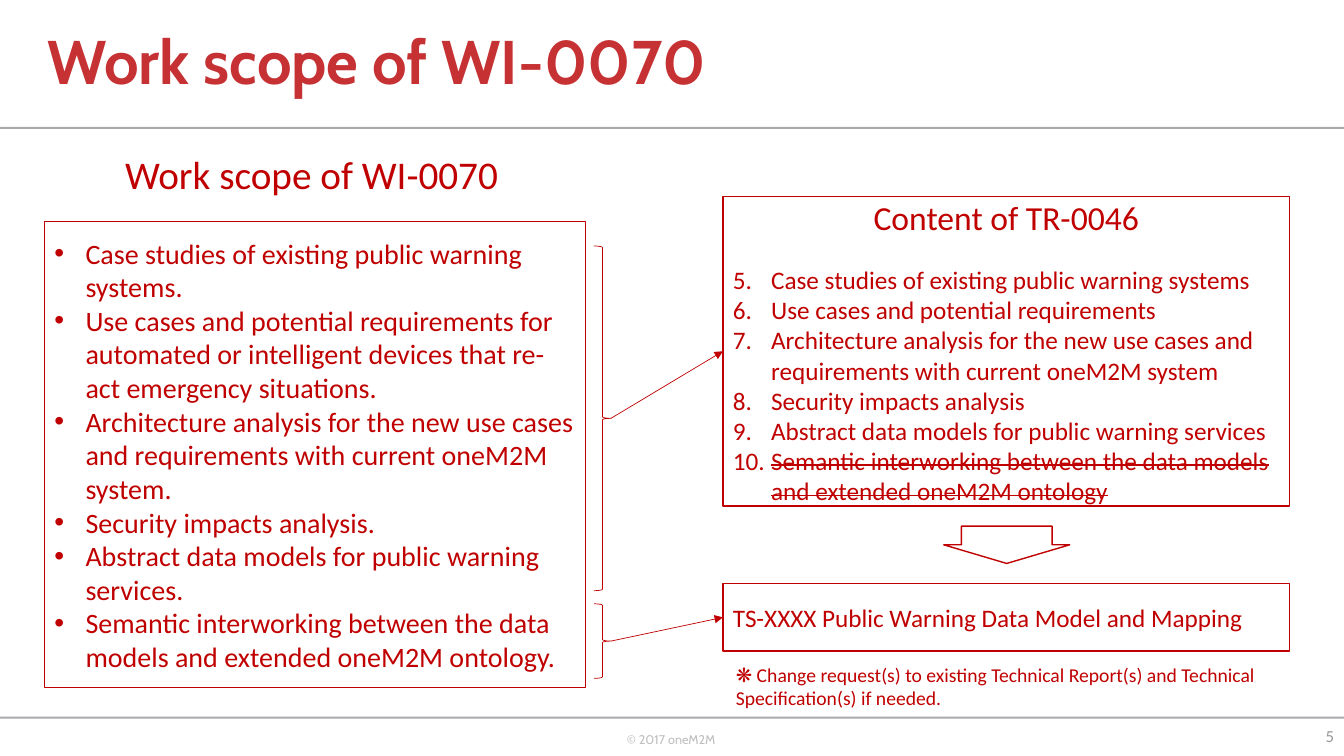
from lxml import etree
from pptx import Presentation
from pptx import util as u
from pptx.dml.color import RGBColor
from pptx.enum import shapes, text
from pptx.oxml.ns import qn

PX = 9144
RED = RGBColor(0xC0, 0x00, 0x00)
TITLE_RED = RGBColor(0xC6, 0x31, 0x33)
RULE_GREY = RGBColor(0xA7, 0xA9, 0xAC)
FOOTER_GREY = RGBColor(0xBF, 0xBF, 0xBF)
NUMBER_GREY = RGBColor(0x99, 0x98, 0x99)
WHITE = RGBColor(0xFF, 0xFF, 0xFF)
LEFT, CENTER, RIGHT = text.PP_ALIGN.LEFT, text.PP_ALIGN.CENTER, text.PP_ALIGN.RIGHT
TOP, MIDDLE = text.MSO_ANCHOR.TOP, text.MSO_ANCHOR.MIDDLE
PRESET = shapes.MSO_SHAPE

WORK_SCOPE = [
    "Case studies of existing public warning systems.",
    "Use cases and potential requirements for automated or intelligent devices that re-act emergency situations.",
    "Architecture analysis for the new use cases and requirements with current oneM2M system.",
    "Security impacts analysis.",
    "Abstract data models for public warning services.",
    "Semantic interworking between the data models and extended oneM2M ontology.",
]
REPORT_CLAUSES = [
    "Case studies of existing public warning systems",
    "Use cases and potential requirements",
    "Architecture analysis for the new use cases and requirements with current oneM2M system",
    "Security impacts analysis",
    "Abstract data models for public warning services",
]
DROPPED_CLAUSE = "Semantic interworking between the data models and extended oneM2M ontology"


def px(*lengths):
    return [u.Emu(length * PX) for length in lengths]


def add_run(paragraph, words, size, color=RED, font="Calibri", bold=False, strike=False):
    run = paragraph.add_run()
    run.text = words
    run.font.size = u.Pt(size)
    run.font.name = font
    run.font.bold = bold
    run.font.color.rgb = color
    if strike:
        run.font._element.set("strike", "sngStrike")


def next_paragraph(frame):
    first = frame.paragraphs[0]
    paragraph = frame.add_paragraph() if first.runs else first
    paragraph.alignment = LEFT
    return paragraph


def add_item(frame, words, size, indent, marker, strike=False, **marker_attributes):
    paragraph = next_paragraph(frame)
    properties = paragraph._p.get_or_add_pPr()
    properties.set("marL", str(indent * PX))
    properties.set("indent", str(-indent * PX))
    if marker == "buChar":
        etree.SubElement(properties, qn("a:buFont"), typeface="Arial")
    etree.SubElement(properties, qn("a:" + marker), **marker_attributes)
    add_run(paragraph, words, size, strike=strike)


def add_label(slide, place, words, size, align=LEFT, anchor=TOP, wrap=True, **style):
    label = slide.shapes.add_textbox(*px(*place))
    frame = label.text_frame
    frame.word_wrap = wrap
    frame.vertical_anchor = anchor
    paragraph = next_paragraph(frame)
    paragraph.alignment = align
    add_run(paragraph, words, size, **style)
    return paragraph


def add_figure(slide, preset, place, fill=None, line=None, weight=1):
    figure = slide.shapes.add_shape(preset, *px(*place))
    figure.shadow.inherit = False
    if fill is None:
        figure.fill.background()
    else:
        figure.fill.solid()
        figure.fill.fore_color.rgb = fill
    if line is None:
        figure.line.fill.background()
    else:
        figure.line.color.rgb = line
        figure.line.width = u.Pt(weight)
    return figure


def add_panel(slide, place):
    panel = add_figure(slide, PRESET.RECTANGLE, place, WHITE, RED)
    panel.text_frame.word_wrap = True
    panel.text_frame.vertical_anchor = MIDDLE
    return panel


def add_brace_to(slide, top, height, target):
    brace = add_figure(slide, PRESET.RIGHT_BRACE, (589, top, 17, height), line=RED, weight=0.5)
    arrow = slide.shapes.add_connector(
        shapes.MSO_CONNECTOR.STRAIGHT,
        brace.left + brace.width, brace.top + brace.height // 2,
        target.left, target.top + target.height // 2)
    arrow.line.color.rgb = RED
    arrow.line.width = u.Pt(0.5)
    etree.SubElement(arrow.line._get_or_add_ln(), qn("a:tailEnd"), type="triangle")
    etree.SubElement(arrow._element.spPr, qn("a:effectLst"))


def add_frame(slide):
    for top in (126, 711):
        add_figure(slide, PRESET.RECTANGLE, (0, top, 1333, 2), RULE_GREY)
    add_label(slide, (612, 721, 110, 40), "© 2017 oneM2M", 9,
              wrap=False, color=FOOTER_GREY, font="Cabin")
    title = add_label(slide, (37, 0, 859, 128), "Work scope of WI-0070", 44,
                      anchor=MIDDLE, color=TITLE_RED, font="Cabin", bold=True)
    title.line_spacing = 0.9
    add_label(slide, (1279, 710, 54, 40), "5", 12, RIGHT, MIDDLE, color=NUMBER_GREY)


def add_work_scope(slide):
    add_label(slide, (37, 144, 544, 57), "Work scope of WI-0070", 28, CENTER)
    scope = add_panel(slide, (44, 220, 537, 462))
    for words in WORK_SCOPE:
        add_item(scope.text_frame, words, 20, 31, "buChar", char="•")


def add_report(slide):
    report = add_panel(slide, (717, 195, 562, 307))
    frame = report.text_frame
    heading = next_paragraph(frame)
    heading.alignment = CENTER
    heading.space_after = u.Pt(19.5)
    add_run(heading, "Content of TR-0046", 24)
    for words in REPORT_CLAUSES + [DROPPED_CLAUSE]:
        add_item(frame, words, 18, 38, "buAutoNum", strike=words == DROPPED_CLAUSE,
                 type="arabicPeriod", startAt="5")
    return report


def add_specification(slide):
    specification = add_panel(slide, (717, 579, 562, 67))
    add_run(next_paragraph(specification.text_frame),
            "TS-XXXX Public Warning Data Model and Mapping", 18)
    add_label(slide, (720, 651, 556, 59),
              "❋ Change request(s) to existing Technical Report(s) and "
              "Technical Specification(s) if needed.", 14, anchor=MIDDLE)
    return specification


def main():
    deck = Presentation()
    deck.slide_width, deck.slide_height = px(1333, 750)
    slide = deck.slides.add_slide(deck.slide_layouts[6])
    add_frame(slide)
    add_work_scope(slide)
    report = add_report(slide)
    specification = add_specification(slide)
    add_brace_to(slide, 244, 342, report)
    add_brace_to(slide, 599, 74, specification)
    outcome = add_figure(slide, PRESET.DOWN_ARROW, (936, 522, 125, 37), WHITE, RED)
    outcome.adjustments[0] = 0.72
    outcome.adjustments[1] = 0.5
    deck.save("out.pptx")


if __name__ == "__main__":
    main()
